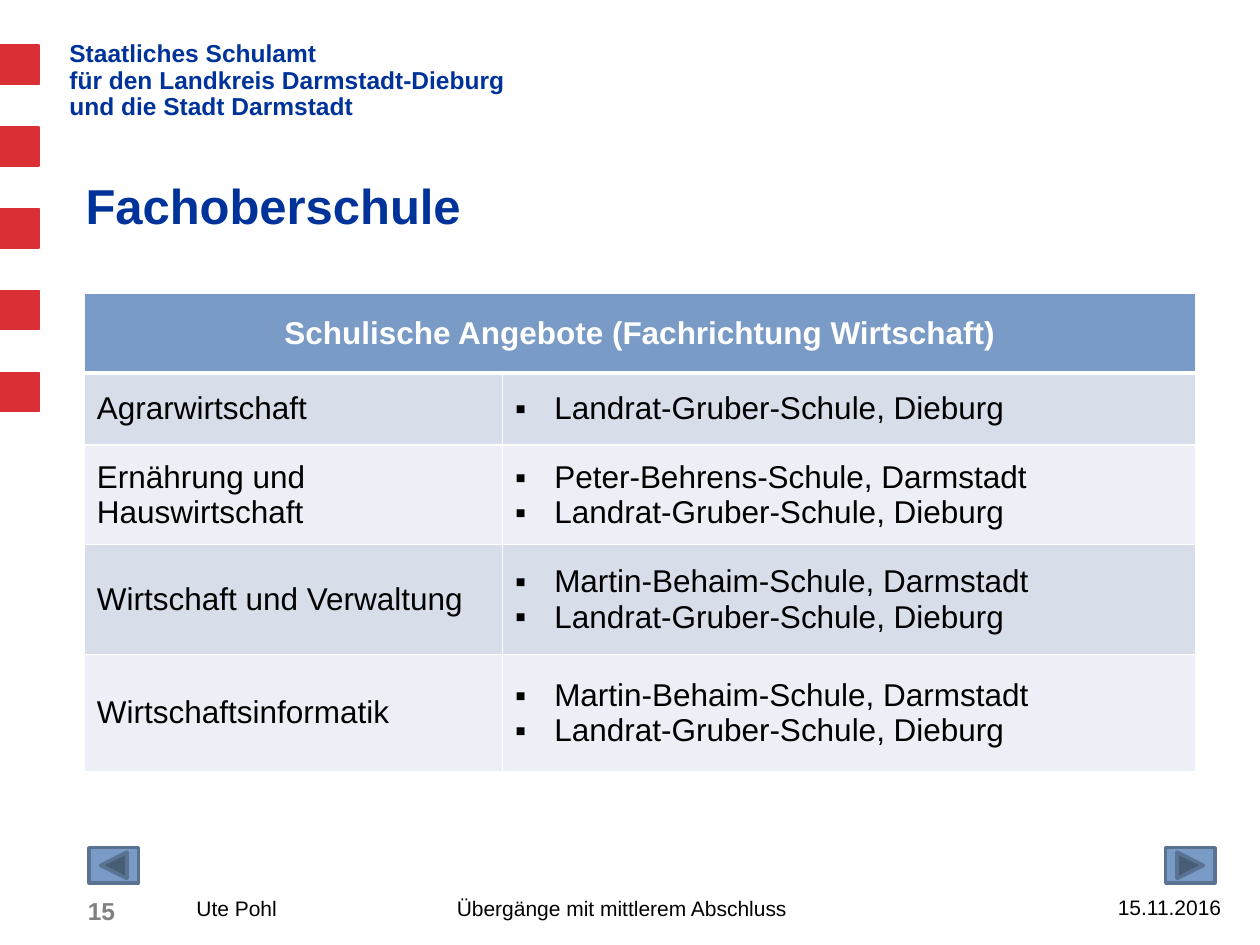
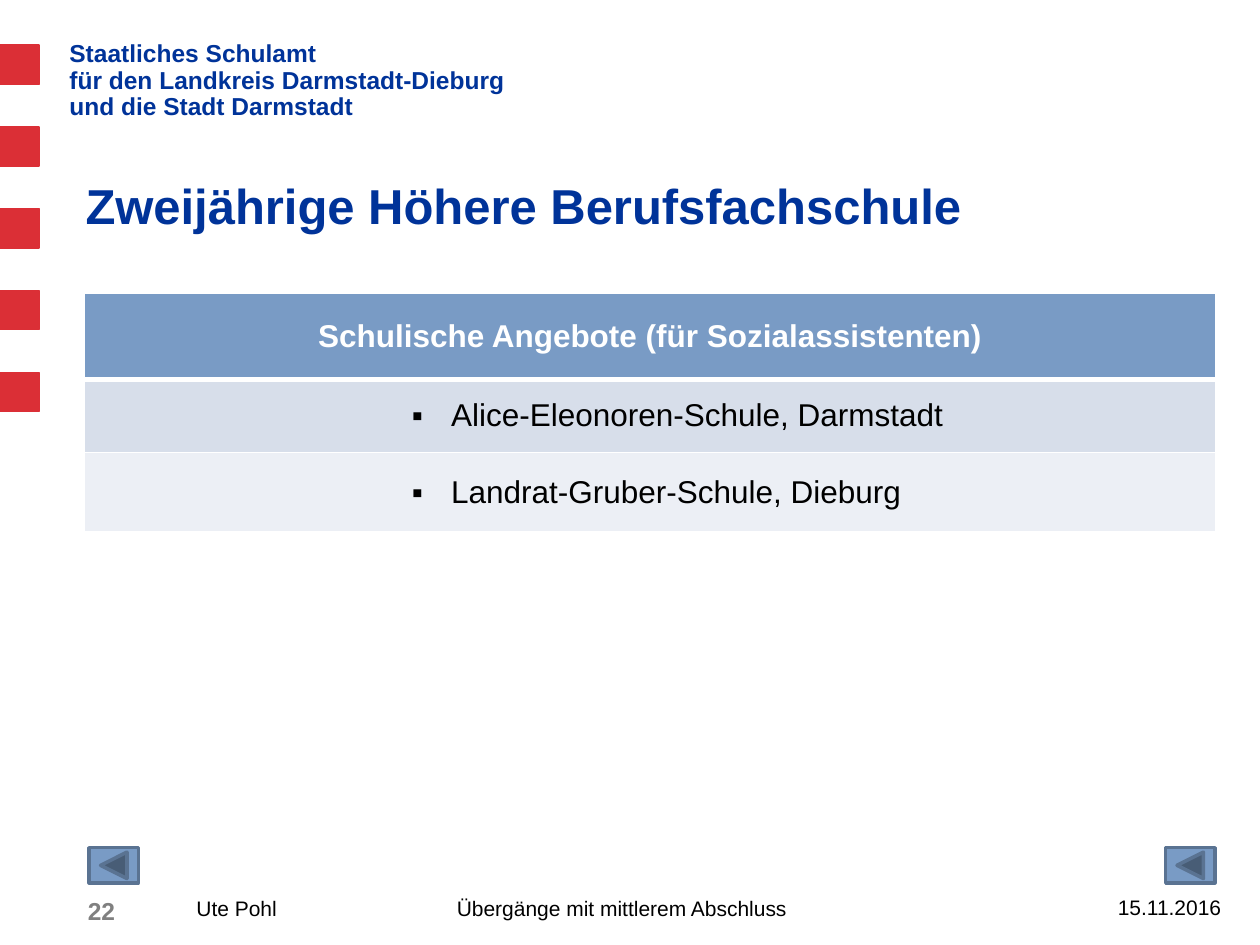
"""Builds two slides listing school offers, with shared header, bands and footer."""
from dataclasses import dataclass, field

from lxml.etree import SubElement
from pptx import Presentation
from pptx.dml.color import RGBColor
from pptx.enum.shapes import MSO_SHAPE
from pptx.enum.text import MSO_ANCHOR, MSO_AUTO_SIZE, PP_ALIGN
from pptx.oxml.ns import qn
from pptx.slide import Slide
from pptx.table import _Cell
from pptx.text.text import TextFrame, _Paragraph
from pptx.util import Cm, Pt


@dataclass(frozen=True)
class Theme:
    font: str = "Arial"
    navy: str = "003399"
    red: str = "DB2F36"
    blue: str = "799BC5"
    outline: str = "5A7392"
    grey: str = "808080"
    black: str = "000000"
    white: str = "FFFFFF"
    stripes: tuple[str, str] = ("D7DEEA", "ECEFF5")
    title_size: int = 28
    table_size: int = 18
    header_size: int = 14
    footer_size: int = 12


THEME = Theme()


@dataclass(frozen=True)
class TextStyle:
    size: int
    color: str
    bold: bool = False
    align: PP_ALIGN = PP_ALIGN.LEFT


@dataclass(frozen=True)
class Place:
    left: float
    top: float
    width: float
    height: float

    def lengths(self) -> tuple[Cm, Cm, Cm, Cm]:
        return Cm(self.left), Cm(self.top), Cm(self.width), Cm(self.height)


@dataclass(frozen=True)
class OfferRow:
    height: float
    schools: list[str]
    subject: str = ""


@dataclass(frozen=True)
class OfferSlide:
    number: int
    title: str
    table_heading: str
    heading_height: float
    column_widths: list[float]
    rows: list[OfferRow]
    bullet_left: float
    right_button: MSO_SHAPE = field(default=MSO_SHAPE.ACTION_BUTTON_BACK_OR_PREVIOUS)


HEADER_LINES = [
    "Staatliches Schulamt",
    "für den Landkreis Darmstadt-Dieburg",
    "und die Stadt Darmstadt",
]
AUTHOR, TOPIC, DATE = "Ute Pohl", "Übergänge mit mittlerem Abschluss", "15.11.2016"
TOPIC_TAB = 5.25
BULLET_HANG = 0.79
BAND_COUNT, BAND_TOP, BAND_SIZE, BAND_STEP = 5, 0.91, 0.79, 1.65
TABLE_LEFT, TABLE_TOP = 1.7, 5.92
BUTTON_LEFTS = (1.8, 23.5)

TITLE_STYLE = TextStyle(THEME.title_size, THEME.navy, True)
HEADER_STYLE = TextStyle(THEME.header_size, THEME.navy, True)
HEADING_STYLE = TextStyle(THEME.table_size, THEME.white, True, PP_ALIGN.CENTER)
CELL_STYLE = TextStyle(THEME.table_size, THEME.black)
FOOTER_STYLE = TextStyle(THEME.footer_size, THEME.black)
DATE_STYLE = TextStyle(THEME.footer_size, THEME.black, align=PP_ALIGN.RIGHT)
NUMBER_STYLE = TextStyle(THEME.header_size, THEME.grey, True)

DIEBURG = "Landrat-Gruber-Schule, Dieburg"
BEHAIM = "Martin-Behaim-Schule, Darmstadt"
OFFER_SLIDES = [
    OfferSlide(
        15, "Fachoberschule", "Schulische Angebote (Fachrichtung Wirtschaft)",
        1.6, [8.43, 13.97],
        [
            OfferRow(1.45, [DIEBURG], "Agrarwirtschaft"),
            OfferRow(2.01, ["Peter-Behrens-Schule, Darmstadt", DIEBURG],
                     "Ernährung und Hauswirtschaft"),
            OfferRow(2.21, [BEHAIM, DIEBURG], "Wirtschaft und Verwaltung"),
            OfferRow(2.36, [BEHAIM, DIEBURG], "Wirtschaftsinformatik"),
        ],
        BULLET_HANG, MSO_SHAPE.ACTION_BUTTON_FORWARD_OR_NEXT,
    ),
    OfferSlide(
        22, "Zweijährige Höhere Berufsfachschule",
        "Schulische Angebote (für Sozialassistenten)",
        1.73, [22.81],
        [
            OfferRow(1.47, ["Alice-Eleonoren-Schule, Darmstadt"]),
            OfferRow(1.6, [DIEBURG]),
        ],
        7.14,
    ),
]


def style_paragraph(para: _Paragraph, style: TextStyle) -> None:
    para.alignment = style.align
    for span in para.runs:
        span.font.name = THEME.font
        span.font.size = Pt(style.size)
        span.font.bold = style.bold
        span.font.color.rgb = RGBColor.from_string(style.color)


def write_lines(frame: TextFrame, lines: list[str], style: TextStyle) -> None:
    for index, line in enumerate(lines):
        para = frame.add_paragraph() if index else frame.paragraphs[0]
        para.text = line
        style_paragraph(para, style)


def add_text(slide: Slide, place: Place, lines: list[str], style: TextStyle) -> TextFrame:
    frame = slide.shapes.add_textbox(*place.lengths()).text_frame
    frame.word_wrap = True
    write_lines(frame, lines, style)
    return frame


def add_filled_shape(slide: Slide, kind: MSO_SHAPE, place: Place,
                     fill: str, line: str, line_width: float) -> None:
    shape = slide.shapes.add_shape(kind, *place.lengths())
    shape.shadow.inherit = False
    shape.fill.solid()
    shape.fill.fore_color.rgb = RGBColor.from_string(fill)
    shape.line.color.rgb = RGBColor.from_string(line)
    shape.line.width = Pt(line_width)


def add_bullet(para: _Paragraph, left: float) -> None:
    properties = para._p.get_or_add_pPr()
    properties.set("marL", str(Cm(left)))
    properties.set("indent", str(-Cm(BULLET_HANG)))
    SubElement(properties, qn("a:buFont"), typeface=THEME.font)
    SubElement(properties, qn("a:buChar"), char="▪")


def add_tab_stop(para: _Paragraph, position: float) -> None:
    tabs = SubElement(para._p.get_or_add_pPr(), qn("a:tabLst"))
    SubElement(tabs, qn("a:tab"), pos=str(Cm(position)), algn="l")


def format_cell(cell: _Cell, fill: str, top: float, bottom: float) -> None:
    properties = cell._tc.get_or_add_tcPr()
    for side, width in (("L", 1), ("R", 1), ("T", top), ("B", bottom)):
        border = SubElement(properties, qn(f"a:ln{side}"), w=str(Pt(width)))
        paint = SubElement(border, qn("a:solidFill"))
        SubElement(paint, qn("a:srgbClr"), val=THEME.white)
    cell.vertical_anchor = MSO_ANCHOR.MIDDLE
    cell.fill.solid()
    cell.fill.fore_color.rgb = RGBColor.from_string(fill)


def add_offer_table(slide: Slide, offer: OfferSlide) -> None:
    heights = [offer.heading_height, *(row.height for row in offer.rows)]
    widths = offer.column_widths
    place = Place(TABLE_LEFT, TABLE_TOP, sum(widths), sum(heights))
    table = slide.shapes.add_table(len(heights), len(widths), *place.lengths()).table
    table.horz_banding = False
    for column, width in zip(table.columns, widths):
        column.width = Cm(width)
    for index, (row, height) in enumerate(zip(table.rows, heights)):
        row.height = Cm(height)
        fill = THEME.stripes[(index - 1) % 2] if index else THEME.blue
        for cell in row.cells:
            format_cell(cell, fill, 3 if index == 1 else 1, 1 if index else 3)

    last_column = len(widths) - 1
    heading = table.cell(0, 0)
    if last_column:
        heading.merge(table.cell(0, last_column))
    write_lines(heading.text_frame, [offer.table_heading], HEADING_STYLE)
    for index, row in enumerate(offer.rows, start=1):
        if row.subject:
            write_lines(table.cell(index, 0).text_frame, [row.subject], CELL_STYLE)
        schools = table.cell(index, last_column).text_frame
        write_lines(schools, row.schools, CELL_STYLE)
        for para in schools.paragraphs:
            add_bullet(para, offer.bullet_left)


def add_header(slide: Slide) -> None:
    for index in range(BAND_COUNT):
        place = Place(0, BAND_TOP + index * BAND_STEP, BAND_SIZE, BAND_SIZE)
        add_filled_shape(slide, MSO_SHAPE.RECTANGLE, place, THEME.red, THEME.red, 0.75)
    frame = add_text(slide, Place(1.4, 0.71, 20.4, 1.88), HEADER_LINES, HEADER_STYLE)
    frame.margin_left = frame.margin_right = 0
    frame.auto_size = MSO_AUTO_SIZE.SHAPE_TO_FIT_TEXT
    for para in frame.paragraphs:
        para.line_spacing = 0.9


def set_title(slide: Slide, text: str) -> None:
    title = slide.shapes.title
    title.left, title.top, title.width, title.height = Place(1.47, 2.49, 23.42, 2.24).lengths()
    frame = title.text_frame
    frame.margin_top = frame.margin_bottom = 0
    frame.vertical_anchor = MSO_ANCHOR.BOTTOM
    frame.auto_size = MSO_AUTO_SIZE.NONE
    write_lines(frame, [text], TITLE_STYLE)


def add_footer(slide: Slide, offer: OfferSlide) -> None:
    add_text(slide, Place(20.5, 17.91, 4.37, 0.81), [DATE], DATE_STYLE)
    credit = add_text(slide, Place(3.71, 17.93, 16.61, 0.81), [f"{AUTHOR}\t{TOPIC}"], FOOTER_STYLE)
    add_tab_stop(credit.paragraphs[0], TOPIC_TAB)
    add_text(slide, Place(1.52, 17.93, 1.96, 0.84), [str(offer.number)], NUMBER_STYLE)
    kinds = (MSO_SHAPE.ACTION_BUTTON_BACK_OR_PREVIOUS, offer.right_button)
    for kind, left in zip(kinds, BUTTON_LEFTS):
        add_filled_shape(slide, kind, Place(left, 17.09, 0.99, 0.71),
                         THEME.blue, THEME.outline, 2)


def main() -> None:
    deck = Presentation()
    deck.slide_width, deck.slide_height = Cm(25.4), Cm(19.05)
    for offer in OFFER_SLIDES:
        page = deck.slides.add_slide(deck.slide_layouts.get_by_name("Title Only"))
        add_header(page)
        set_title(page, offer.title)
        add_offer_table(page, offer)
        add_footer(page, offer)
    deck.save("out.pptx")


if __name__ == "__main__":
    main()
